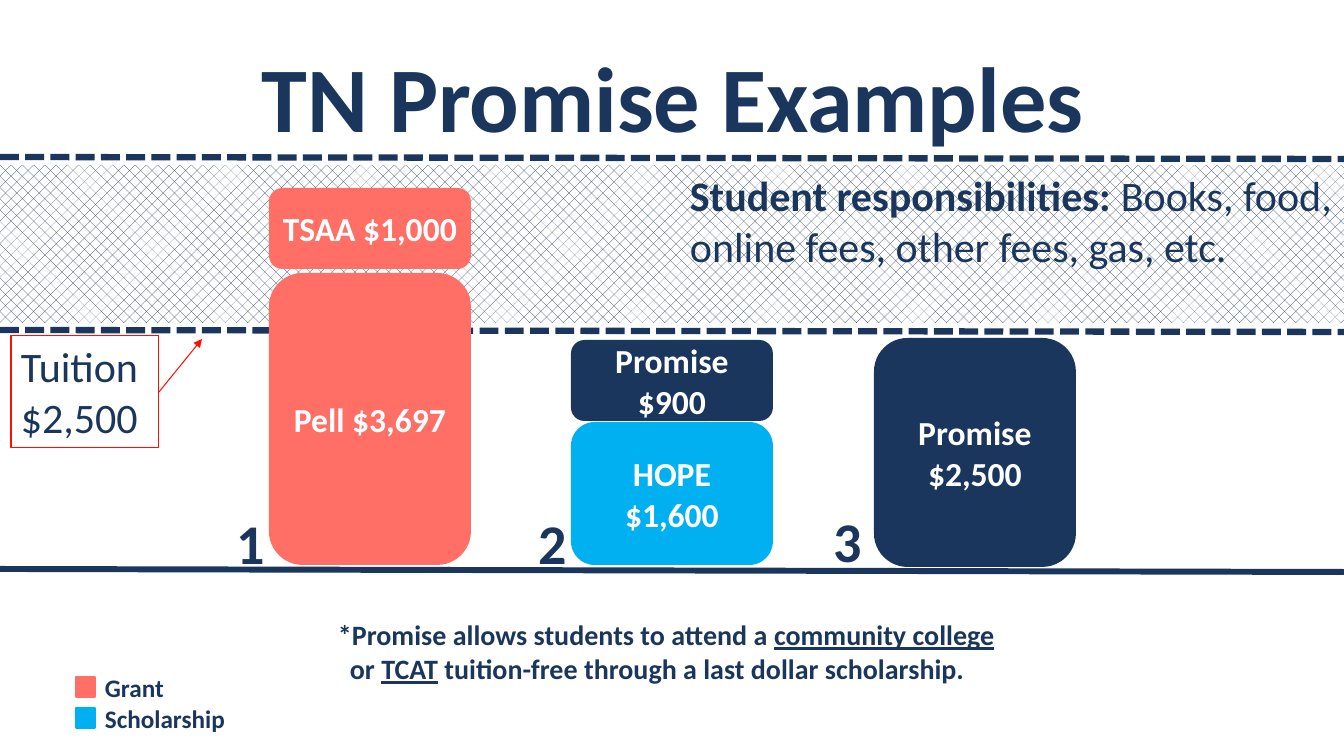
from dataclasses import dataclass
from lxml import etree
from pptx import Presentation
from pptx import util as u
from pptx.dml.color import RGBColor
from pptx.enum import dml, shapes, text
from pptx.oxml.ns import qn


@dataclass(frozen=True)
class Theme:
    font: str = "Calibri"
    navy: str = "1B365D"
    coral: str = "FF6F66"
    blue: str = "00B0F0"
    red: str = "FF0F00"
    white: str = "FFFFFF"
    title: int = 66
    number: int = 40
    large: int = 30
    bar: int = 24
    note: int = 20
    legend: int = 18


theme = Theme()

# Content: runs are (text, style), lengths are px
TITLE = "TN Promise Examples"
BAND = (0, 165, 1344, 158)
RULES = [  # start, end, width in points, dashed
    ((0, 330), (1344, 332), 4.5, True),
    ((0, 569), (1344, 572), 4.25, False),
    ((0, 157), (1344, 159), 4.5, True),
]
BAR_WIDTH = 202
EXAMPLES = [  # number, number position, bar left, awards (text, top, height, colour)
    ("1", (227, 504), 269, [("Pell $3,697", 273, 292, theme.coral),
                            ("TSAA $1,000", 188, 81, theme.coral)]),
    ("2", (529, 504), 571, [("HOPE $1,600", 422, 143, theme.blue),
                            ("Promise $900", 340, 81, theme.navy)]),
    ("3", (824, 502), 874, [("Promise $2,500", 338, 229, theme.navy)]),
]
RESPONSIBILITIES = [[("Student responsibilities: ", "bold"),
                     ("Books, food, online fees, other fees, gas, etc.", "")]]
TUITION = [[("Tuition", "")], [("$2,500", "")]]
FOOTNOTE = [[("*Promise allows students to attend a ", ""),
             ("community college", "underline"), (" ", ""), ("\n", ""), ("or ", ""),
             ("TCAT", "underline"),
             (" tuition-free through a last dollar scholarship.", "")]]
LEGEND = [("Grant", theme.coral, 88), ("Scholarship", theme.blue, 146)]
LEGEND_TOP, LEGEND_STEP = 677, 31


def px(value):
    return u.Emu(round(value * 914400 / 100.8))


def box(*lengths):
    return [px(length) for length in lengths]


def rgb(colour):
    return RGBColor.from_string(colour)


def style_font(font, size, colour, bold):
    font.name, font.size, font.bold = theme.font, u.Pt(size), bold
    font.color.rgb = rgb(colour)


def add_text(place, paragraphs, size, bold=True, wrap=True):
    shape = slide.shapes.add_textbox(*box(*place))
    frame = shape.text_frame
    frame.word_wrap = wrap
    frame.auto_size = text.MSO_AUTO_SIZE.SHAPE_TO_FIT_TEXT
    for index, runs in enumerate(paragraphs):
        paragraph = frame.paragraphs[0] if index == 0 else frame.add_paragraph()
        style_font(paragraph.font, size, theme.navy, bold)
        for words, style in runs:
            if words == "\n":
                paragraph.add_line_break()
                continue
            run = paragraph.add_run()
            run.text = words
            if style == "bold":
                run.font.bold = True
            elif style == "underline":
                run.font.underline = True
    return shape


def add_block(kind, place, colour):
    shape = slide.shapes.add_shape(kind, *box(*place))
    shape.shadow.inherit = False
    shape.fill.solid()
    shape.fill.fore_color.rgb = rgb(colour)
    shape.line.fill.background()
    return shape


def add_line(start, end, colour, width):
    line = slide.shapes.add_connector(shapes.MSO_CONNECTOR.STRAIGHT, *box(*start, *end))
    line.line.color.rgb = rgb(colour)
    line.line.width = u.Pt(width)
    etree.SubElement(line._element.spPr, qn("a:effectLst"))
    return line


def outline_text(run, colour):
    outline = etree.Element(qn("a:ln"), w=str(u.Pt(1.06)))
    fill = etree.SubElement(outline, qn("a:solidFill"))
    etree.SubElement(fill, qn("a:srgbClr"), val=colour)
    run._r.get_or_add_rPr().insert(0, outline)


presentation = Presentation()
presentation.slide_width, presentation.slide_height = box(1344, 756)
slide = presentation.slides.add_slide(presentation.slide_layouts[5])

# Title
title = slide.shapes.title
title.left, title.top, title.width, title.height = box(68, 33, 1210, 126)
title.text_frame.text = TITLE
title.text_frame.auto_size = text.MSO_AUTO_SIZE.NONE
title.text_frame.vertical_anchor = text.MSO_ANCHOR.MIDDLE
title_paragraph = title.text_frame.paragraphs[0]
title_paragraph.alignment = text.PP_ALIGN.CENTER
style_font(title_paragraph.font, theme.title, theme.navy, True)

# Hatched band and horizontal rules
band = add_block(shapes.MSO_SHAPE.RECTANGLE, BAND, theme.white)
band.fill.patterned()
band.fill.pattern = dml.MSO_PATTERN.PERCENT_25
band.fill.fore_color.rgb = rgb(theme.navy)
band.fill.back_color.rgb = rgb(theme.white)
for start, end, width, dashed in RULES:
    rule = add_line(start, end, theme.navy, width)
    if dashed:
        rule.line.dash_style = dml.MSO_LINE.SQUARE_DOT

# Stacked awards with their example numbers
for number, position, left, awards in EXAMPLES:
    for words, top, height, colour in awards:
        bar = add_block(shapes.MSO_SHAPE.ROUNDED_RECTANGLE,
                        (left, top, BAR_WIDTH, height), colour)
        bar.text_frame.text = words
        bar.text_frame.word_wrap = True
        bar.text_frame.vertical_anchor = text.MSO_ANCHOR.MIDDLE
        bar_paragraph = bar.text_frame.paragraphs[0]
        bar_paragraph.alignment = text.PP_ALIGN.CENTER
        style_font(bar_paragraph.font, theme.bar, theme.white, True)
    label = add_text((*position, 50, 78), [[(number, "")]], theme.number)
    outline_text(label.text_frame.paragraphs[0].runs[0], theme.white)

# Student responsibilities
add_text((680, 165, 663, 112), RESPONSIBILITIES, theme.large, bold=False)

# Legend
for index, (name, colour, width) in enumerate(LEGEND):
    top = LEGEND_TOP + index * LEGEND_STEP
    swatch = add_block(shapes.MSO_SHAPE.RECTANGLE, (76, top, 19, 20), colour)
    swatch.line.color.rgb = rgb(colour)
    swatch.line.width = u.Pt(2)
    add_text((95, top - 10, width, 40), [[(name, "")]], theme.legend)

# Tuition callout and arrow
tuition = add_text((11, 336, 148, 112), TUITION, theme.large, bold=False, wrap=False)
tuition.line.color.rgb = rgb(theme.red)
tuition.line.width = u.Pt(0.75)
arrow = add_line((159, 392), (202, 339), theme.red, 0.75)
etree.SubElement(arrow.line._get_or_add_ln(), qn("a:tailEnd"), type="triangle")

# Footnote with a hanging indent
footnote = add_text((328, 613, 688, 78), FOOTNOTE, theme.note)
properties = footnote.text_frame.paragraphs[0]._p.get_or_add_pPr()
properties.set("marL", str(px(12)))
properties.set("indent", str(-px(12)))

presentation.save("out.pptx")
